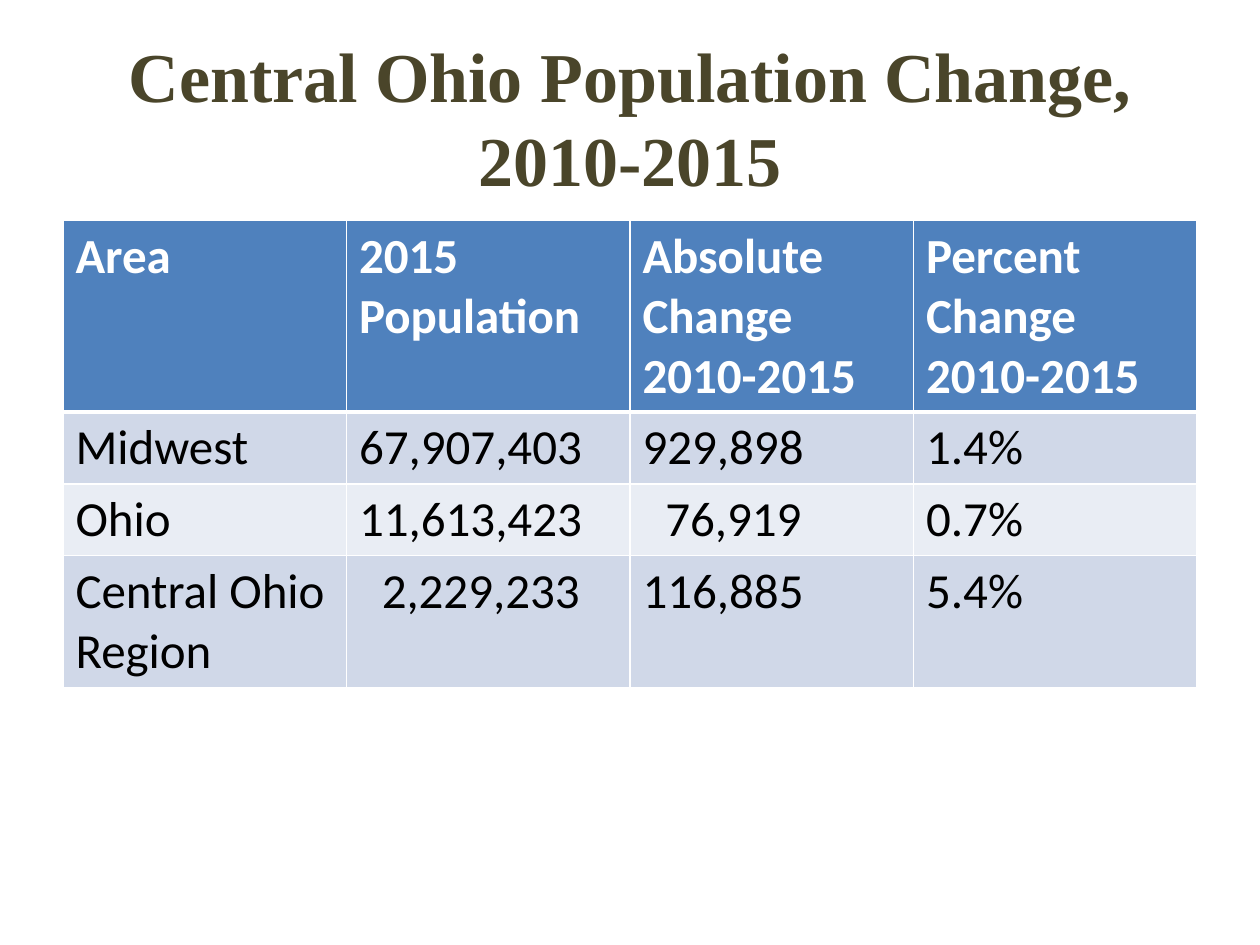
from dataclasses import dataclass

from lxml import etree
from pptx import Presentation
from pptx.dml.color import RGBColor
from pptx.enum import text
from pptx.oxml import ns
from pptx.util import Inches, Pt

COLORS = {
    "title": "4A452A",
    "header": "4F81BD",
    "odd": "D0D8E8",
    "even": "E9EDF4",
    "white": "FFFFFF",
    "black": "000000",
}
HEADINGS = (
    ("Area",),
    ("2015 Population",),
    ("Absolute Change 2010-2015",),
    ("Percent Change", "2010-2015"),
)
ROW_HEIGHTS = (1.52, 0.57, 0.57, 1.05)
COLUMN_WIDTH = 2.25
CELL_MARGIN = 0.1
DIGIT_INDENT = 0.18


@dataclass(frozen=True)
class Area:
    name: str
    population: str
    change: str
    percent: str
    indented: tuple[str, ...] = ()


AREAS = (
    Area("Midwest", "67,907,403", "929,898", "1.4%"),
    Area("Ohio", "11,613,423", "76,919", "0.7%", ("change",)),
    Area("Central Ohio Region", "2,229,233", "116,885", "5.4%", ("population",)),
)
FIELDS = ("name", "population", "change", "percent")


def add_run(paragraph, words: str, font: str, size: float, color: str, bold: bool) -> None:
    run = paragraph.add_run()
    run.text = words
    run.font.name = font
    run.font.size = Pt(size)
    run.font.bold = bold
    run.font.color.rgb = RGBColor.from_string(COLORS[color])


def set_borders(cell, top: float, bottom: float) -> None:
    properties = cell._tc.get_or_add_tcPr()
    widths = {"a:lnL": 1, "a:lnR": 1, "a:lnT": top, "a:lnB": bottom}
    for position, (tag, width) in enumerate(widths.items()):
        line = etree.Element(ns.qn(tag), w=str(Pt(width)))
        fill = etree.SubElement(line, ns.qn("a:solidFill"))
        etree.SubElement(fill, ns.qn("a:srgbClr"), val=COLORS["white"])
        properties.insert(position, line)


def fill_cell(cell, lines: tuple[str, ...], fill: str, header: bool,
              indent: float = 0, top: float = 1) -> None:
    cell.fill.solid()
    cell.fill.fore_color.rgb = RGBColor.from_string(COLORS[fill])
    cell.margin_left = Inches(CELL_MARGIN + indent)
    set_borders(cell, top, 3 if header else 1)
    frame = cell.text_frame
    for number, words in enumerate(lines):
        paragraph = frame.add_paragraph() if number else frame.paragraphs[0]
        add_run(paragraph, words, "Calibri", 28, "white" if header else "black", header)


def add_title(slide, words: str) -> None:
    title = slide.shapes.add_textbox(Inches(0.5), Inches(0.3), Inches(9), Inches(1.25))
    frame = title.text_frame
    frame.word_wrap = True
    frame.vertical_anchor = text.MSO_ANCHOR.MIDDLE
    paragraph = frame.paragraphs[0]
    paragraph.alignment = text.PP_ALIGN.CENTER
    add_run(paragraph, words, "Times New Roman", 40, "title", True)


def add_population_table(slide) -> None:
    population = slide.shapes.add_table(
        len(AREAS) + 1, len(FIELDS), Inches(0.5), Inches(1.75),
        Inches(COLUMN_WIDTH * len(FIELDS)), Inches(sum(ROW_HEIGHTS)),
    ).table
    for column in population.columns:
        column.width = Inches(COLUMN_WIDTH)
    for row, height in zip(population.rows, ROW_HEIGHTS):
        row.height = Inches(height)
    for column, heading in enumerate(HEADINGS):
        fill_cell(population.cell(0, column), heading, "header", True)
    for row, area in enumerate(AREAS, start=1):
        for column, field in enumerate(FIELDS):
            fill_cell(
                population.cell(row, column),
                (getattr(area, field),),
                "odd" if row % 2 else "even",
                False,
                DIGIT_INDENT if field in area.indented else 0,
                3 if row == 1 else 1,
            )


def main() -> None:
    deck = Presentation()
    deck.slide_width = Inches(10)
    deck.slide_height = Inches(7.5)
    slide = deck.slides.add_slide(deck.slide_layouts[6])
    add_title(slide, "Central Ohio Population Change, 2010-2015")
    add_population_table(slide)
    deck.save("out.pptx")


if __name__ == "__main__":
    main()
